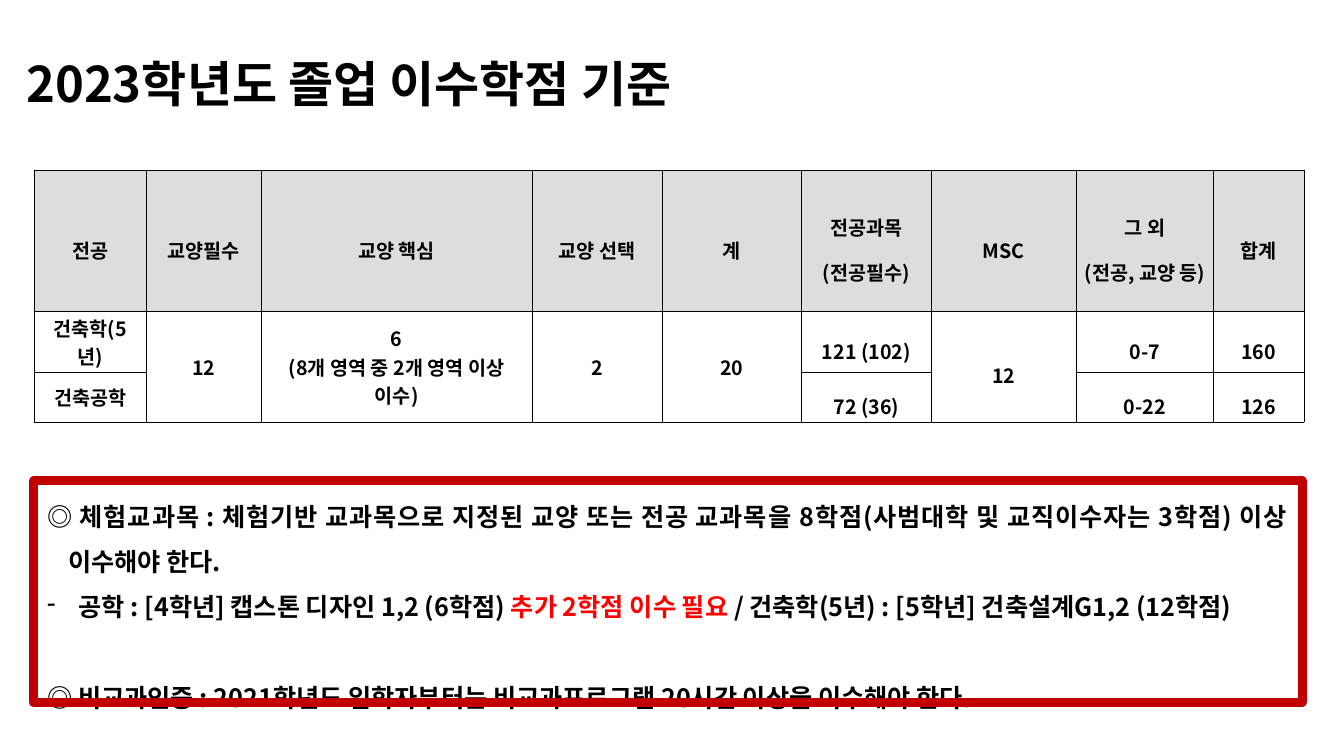
import pptx
import pptx.dml.color
import pptx.enum.shapes
import pptx.enum.text
import pptx.oxml
import pptx.oxml.ns
import pptx.util

Pt = pptx.util.Pt
RGBColor = pptx.dml.color.RGBColor
PP_ALIGN = pptx.enum.text.PP_ALIGN
MIDDLE = pptx.enum.text.MSO_ANCHOR.MIDDLE
AUTO_SIZE = pptx.enum.text.MSO_AUTO_SIZE

FONT = "Noto Sans CJK KR"
BLACK = RGBColor(0x00, 0x00, 0x00)
RED = RGBColor(0xFF, 0x00, 0x00)
DARK_RED = RGBColor(0xC0, 0x00, 0x00)
HEADER_GRAY = RGBColor(0xDD, 0xDD, 0xDD)


def add_run(paragraph, text, size, color=BLACK):
    run = paragraph.add_run()
    run.text = text
    run.font.size = Pt(size)
    run.font.bold = True
    run.font.color.rgb = color
    run.font.name = FONT
    east_asian = pptx.oxml.parse_xml(
        f'<a:ea {pptx.oxml.ns.nsdecls("a")} typeface="{FONT}"/>')
    run.font._element.append(east_asian)


def set_borders(cell, width):
    """Draw a thin black line on all four sides of the cell."""
    for index, side in enumerate(("lnL", "lnR", "lnT", "lnB")):
        border = pptx.oxml.parse_xml(
            f'<a:{side} {pptx.oxml.ns.nsdecls("a")} w="{Pt(width)}">'
            f'<a:solidFill><a:srgbClr val="{BLACK}"/></a:solidFill></a:{side}>')
        cell._tc.get_or_add_tcPr().insert(index, border)


presentation = pptx.Presentation()
presentation.slide_width = Pt(960)
presentation.slide_height = Pt(540)
slide = presentation.slides.add_slide(presentation.slide_layouts[5])

# Title
title = slide.shapes.title
title.left, title.top, title.width, title.height = Pt(11.5), Pt(10), Pt(828), Pt(104.4)
title.text_frame.auto_size = AUTO_SIZE.NONE
title.text_frame.vertical_anchor = MIDDLE
title_paragraph = title.text_frame.paragraphs[0]
title_paragraph.alignment = PP_ALIGN.LEFT
title_paragraph.line_spacing = 0.9
add_run(title_paragraph, "2023학년도 졸업 이수학점 기준", 35)

# Credit table: None marks a cell merged into the one above
COLUMN_WIDTHS = [80, 82.4, 193, 93.2, 99.4, 92.9, 103.6, 97.9, 64.8]
ROW_HEIGHTS = [44.6, 30.2, 30.2]
CREDITS = [
    ["전공", "교양필수", "교양 핵심", "교양 선택", "계", "전공과목\n(전공필수)",
     "MSC", "그 외\n(전공, 교양 등)", "합계"],
    ["건축학(5년)", "12", "6\n(8개 영역 중 2개 영역 이상 이수)", "2", "20",
     "121 (102)", "12", "0-7", "160"],
    ["건축공학", None, None, None, None, "72 (36)", None, "0-22", "126"],
]
FIRST_WIDE_SPACED_COLUMN = 5

table = slide.shapes.add_table(
    len(ROW_HEIGHTS), len(COLUMN_WIDTHS), Pt(24.5), Pt(121.7),
    Pt(sum(COLUMN_WIDTHS)), Pt(sum(ROW_HEIGHTS))).table
table.first_row = False
table.horz_banding = False
for column, width in zip(table.columns, COLUMN_WIDTHS):
    column.width = Pt(width)
for row, height in zip(table.rows, ROW_HEIGHTS):
    row.height = Pt(height)

for row_index, row_texts in enumerate(CREDITS):
    for column_index, text in enumerate(row_texts):
        cell = table.cell(row_index, column_index)
        cell.margin_left = cell.margin_right = Pt(5)
        cell.margin_top = cell.margin_bottom = Pt(1.4)
        cell.vertical_anchor = MIDDLE
        if row_index == 0:
            cell.fill.solid()
            cell.fill.fore_color.rgb = HEADER_GRAY
        else:
            cell.fill.background()
        set_borders(cell, 0.28)
        if text is None:
            table.cell(row_index - 1, column_index).merge(cell)
            continue
        wide_spaced = row_index == 0 or column_index >= FIRST_WIDE_SPACED_COLUMN
        for line_index, line in enumerate(text.split("\n")):
            if line_index:
                paragraph = cell.text_frame.add_paragraph()
            else:
                paragraph = cell.text_frame.paragraphs[0]
            paragraph.alignment = PP_ALIGN.CENTER
            paragraph.line_spacing = 1.6 if wide_spaced else 1.0
            add_run(paragraph, line, 14)

# Notes on requirements: (hanging indent, space before, bullet, runs)
NOTES = [
    (15, 0, None, [("◎ 체험교과목 : 체험기반 교과목으로 지정된 교양 또는 전공 교과목을 "
                    "8학점(사범대학 및 교직이수자는 3학점) 이상 이수해야 한다. ", BLACK)]),
    (22.5, 0, "-", [("공학 : [4학년] 캡스톤 디자인 1,2 (6학점) ", BLACK),
                    ("추가 2학점 이수 필요 ", RED),
                    ("/ 건축학(5년) : [5학년] 건축설계G1,2 (12학점)", BLACK)]),
    (15, 32.5, None, [("◎ 비교과인증 : 2021학년도 입학자부터는 비교과프로그램 "
                       "20시간 이상을 이수해야 한다. ", BLACK)]),
]
notes_group = slide.shapes.add_group_shape()
notes_box = notes_group.shapes.add_textbox(Pt(26.6), Pt(343.4), Pt(899.3), Pt(138.2))
notes_frame = notes_box.text_frame
notes_frame.word_wrap = True
notes_frame.auto_size = AUTO_SIZE.SHAPE_TO_FIT_TEXT
for note_index, (indent, space_before, bullet, runs) in enumerate(NOTES):
    paragraph = notes_frame.add_paragraph() if note_index else notes_frame.paragraphs[0]
    paragraph.alignment = PP_ALIGN.JUSTIFY
    paragraph.line_spacing = 1.5
    paragraph.space_before = Pt(space_before)
    properties = paragraph._p.get_or_add_pPr()
    properties.set("marL", str(Pt(indent)))
    properties.set("indent", str(-Pt(indent)))
    if bullet:
        properties.append(pptx.oxml.parse_xml(
            f'<a:buChar {pptx.oxml.ns.nsdecls("a")} char="{bullet}"/>'))
    for text, color in runs:
        add_run(paragraph, text, 18, color)

frame = notes_group.shapes.add_shape(
    pptx.enum.shapes.MSO_SHAPE.RECTANGLE, Pt(23.8), Pt(343.4), Pt(906.5), Pt(158.4))
frame.shadow.inherit = False
frame.fill.background()
frame.line.color.rgb = DARK_RED
frame.line.width = Pt(6)

presentation.save("out.pptx")
